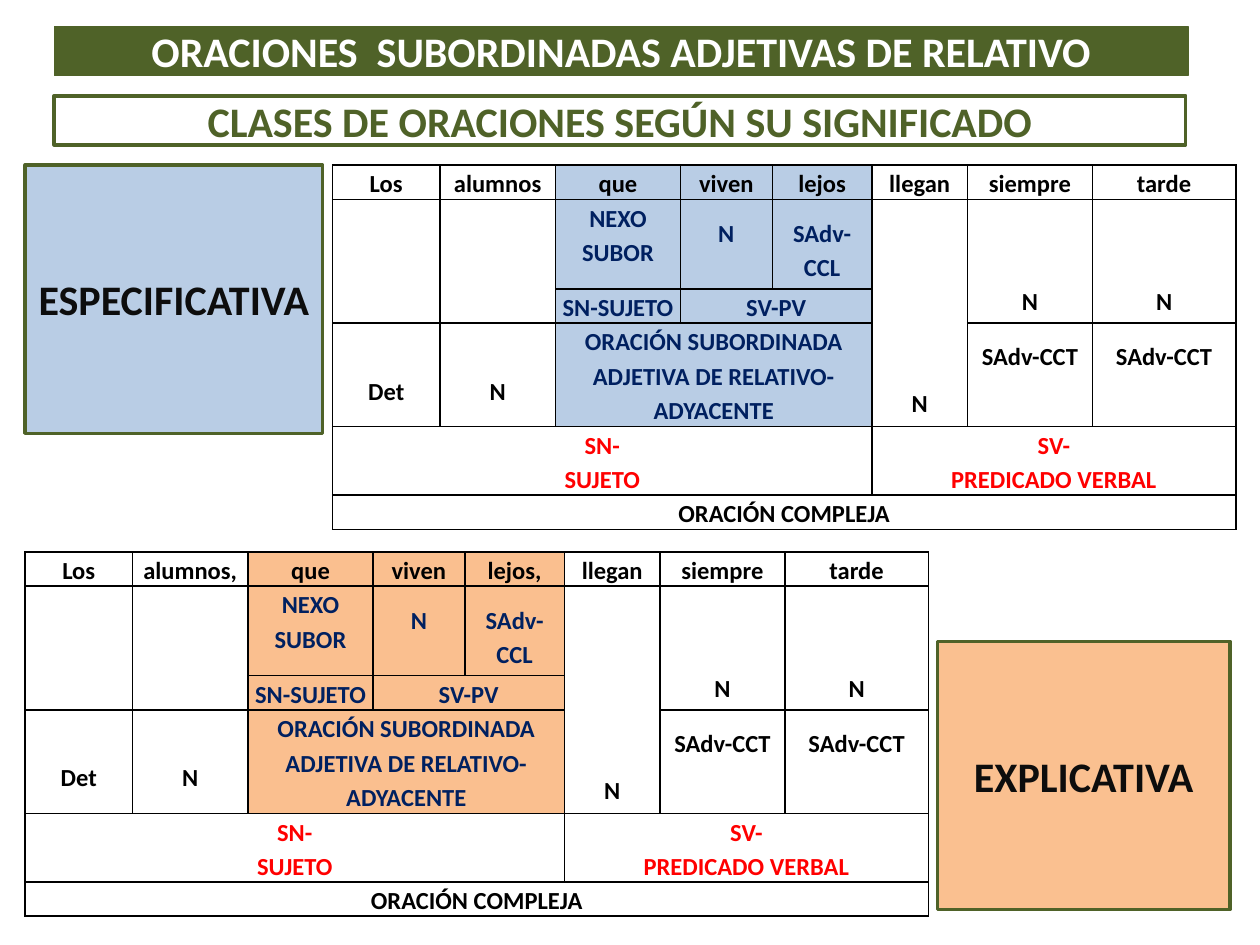
"""Build a slide comparing restrictive and non-restrictive relative clauses."""
from dataclasses import dataclass

from lxml.etree import SubElement
from pptx import Presentation
from pptx.dml.color import RGBColor
from pptx.enum.shapes import MSO_SHAPE
from pptx.enum.text import MSO_ANCHOR, MSO_AUTO_SIZE, PP_ALIGN
from pptx.oxml.ns import qn
from pptx.util import Inches, Pt


@dataclass(frozen=True)
class Theme:
    font: str = "Calibri"
    heading_size: int = 24
    cell_size: int = 14
    border_width: int = 1
    green: str = "4F6228"
    white: str = "FFFFFF"
    black: str = "000000"
    label: str = "0D0D0D"
    navy: str = "002060"
    red: str = "FF0000"
    blue_fill: str = "B9CDE5"
    orange_fill: str = "FABF8F"
    orange_label_fill: str = "FAC090"


theme = Theme()


def write_text(frame, lines, size, color, spacing):
    for index, line in enumerate(lines):
        para = frame.paragraphs[0] if index == 0 else frame.add_paragraph()
        para.alignment = PP_ALIGN.CENTER
        para.line_spacing = spacing
        span = para.add_run()
        span.text = line
        font_format = {"name": theme.font, "size": Pt(size), "bold": True}
        for name, value in font_format.items():
            setattr(span.font, name, value)
        span.font.color.rgb = RGBColor.from_string(color)


def format_box(box, text, fill, line, line_width, color):
    box.shadow.inherit = False
    box.fill.solid()
    box.fill.fore_color.rgb = RGBColor.from_string(fill)
    box.line.color.rgb = RGBColor.from_string(line)
    box.line.width = Pt(line_width)
    frame_format = {
        "word_wrap": True,
        "auto_size": MSO_AUTO_SIZE.NONE,
        "vertical_anchor": MSO_ANCHOR.MIDDLE,
        "margin_left": Inches(0.1),
        "margin_right": Inches(0.1),
        "margin_top": Inches(0.05),
        "margin_bottom": Inches(0.05),
    }
    for name, value in frame_format.items():
        setattr(box.text_frame, name, value)
    write_text(box.text_frame, [text], theme.heading_size, color, 1.0)


deck = Presentation()
deck.slide_width = Inches(10)
deck.slide_height = Inches(7.5)
page = deck.slides.add_slide(deck.slide_layouts[5])

title = page.shapes.title
title_place = {"left": 0.43, "top": 0.21, "width": 9, "height": 0.39}
for name, value in title_place.items():
    setattr(title, name, Inches(value))
format_box(title, "ORACIONES  SUBORDINADAS ADJETIVAS DE RELATIVO",
           theme.green, theme.green, 0.75, theme.white)

boxes = [
    ("CLASES DE ORACIONES SEGÚN SU SIGNIFICADO", (0.43, 0.76, 8.98, 0.39),
     theme.white, theme.green),
    ("ESPECIFICATIVA", (0.2, 1.31, 2.36, 2.13), theme.blue_fill, theme.label),
    ("EXPLICATIVA", (7.44, 5.09, 2.32, 2.13), theme.orange_label_fill, theme.label),
]
for text, place, fill, color in boxes:
    box = page.shapes.add_shape(MSO_SHAPE.RECTANGLE, *map(Inches, place))
    format_box(box, text, fill, theme.green, 2, color)

column_widths = [0.85, 0.92, 0.99, 0.73, 0.79, 0.76, 0.99, 1.14]
row_heights = [0.27, 0.71, 0.27, 0.82, 0.54, 0.27]
merges = [
    ((1, 0), (2, 0)), ((1, 1), (2, 1)), ((1, 5), (3, 5)),
    ((1, 6), (2, 6)), ((1, 7), (2, 7)), ((2, 3), (2, 4)),
    ((3, 2), (3, 4)), ((4, 0), (4, 4)), ((4, 5), (4, 7)), ((5, 0), (5, 7)),
]
small_drop = 0.12
line_drop = 0.27
analysis = [
    (1, 2, ["NEXO SUBOR"], theme.navy, 0),
    (1, 3, ["N"], theme.navy, small_drop),
    (1, 4, ["SAdv-CCL"], theme.navy, small_drop),
    (1, 5, ["N"], theme.black, small_drop + 5 * line_drop),
    (1, 6, ["N"], theme.black, small_drop + 2 * line_drop),
    (1, 7, ["N"], theme.black, small_drop + 2 * line_drop),
    (2, 2, ["SN-SUJETO"], theme.navy, 0),
    (2, 3, ["SV-PV"], theme.navy, 0),
    (3, 0, ["Det"], theme.black, small_drop + line_drop),
    (3, 1, ["N"], theme.black, small_drop + line_drop),
    (3, 2, ["ORACIÓN SUBORDINADA ADJETIVA DE RELATIVO-", "ADYACENTE"], theme.navy, 0),
    (3, 6, ["SAdv-CCT"], theme.black, small_drop),
    (3, 7, ["SAdv-CCT"], theme.black, small_drop),
    (4, 0, ["SN-", "SUJETO"], theme.red, 0),
    (4, 5, ["SV-", "PREDICADO VERBAL"], theme.red, 0),
    (5, 0, ["ORACIÓN COMPLEJA"], theme.black, 0),
]
sentences = [
    ("Los alumnos que viven lejos llegan siempre tarde", 2.64, 1.31, theme.blue_fill),
    ("Los alumnos, que viven lejos, llegan siempre tarde", 0.2, 4.38, theme.orange_fill),
]

for sentence, left, top, clause_fill in sentences:
    table = page.shapes.add_table(
        len(row_heights), len(column_widths), Inches(left), Inches(top),
        Inches(sum(column_widths)), Inches(sum(row_heights))).table
    table.first_row = False
    table.horz_banding = False
    for column, width in zip(table.columns, column_widths):
        column.width = Inches(width)
    for row, height in zip(table.rows, row_heights):
        row.height = Inches(height)
    for row_index in range(len(row_heights)):
        for column_index in range(len(column_widths)):
            cell = table.cell(row_index, column_index)
            cell_format = {
                "margin_left": Inches(0.04),
                "margin_right": Inches(0.04),
                "margin_top": 0,
                "margin_bottom": 0,
                "vertical_anchor": MSO_ANCHOR.TOP,
            }
            for name, value in cell_format.items():
                setattr(cell, name, value)
            properties = cell._tc.get_or_add_tcPr()
            for side in ("a:lnL", "a:lnR", "a:lnT", "a:lnB"):
                border = SubElement(properties, qn(side), w=str(Pt(theme.border_width)))
                paint = SubElement(border, qn("a:solidFill"))
                SubElement(paint, qn("a:srgbClr"), val=theme.black)
            if row_index <= 3 and 2 <= column_index <= 4:
                cell.fill.solid()
                cell.fill.fore_color.rgb = RGBColor.from_string(clause_fill)
            else:
                cell.fill.background()
    for first, last in merges:
        table.cell(*first).merge(table.cell(*last))
    words = [(0, index, [word], theme.black, 0)
             for index, word in enumerate(sentence.split())]
    for row_index, column_index, lines, color, drop in words + analysis:
        cell = table.cell(row_index, column_index)
        cell.margin_top = Inches(drop)
        write_text(cell.text_frame, lines, theme.cell_size, color, 1.15)

deck.save("out.pptx")
